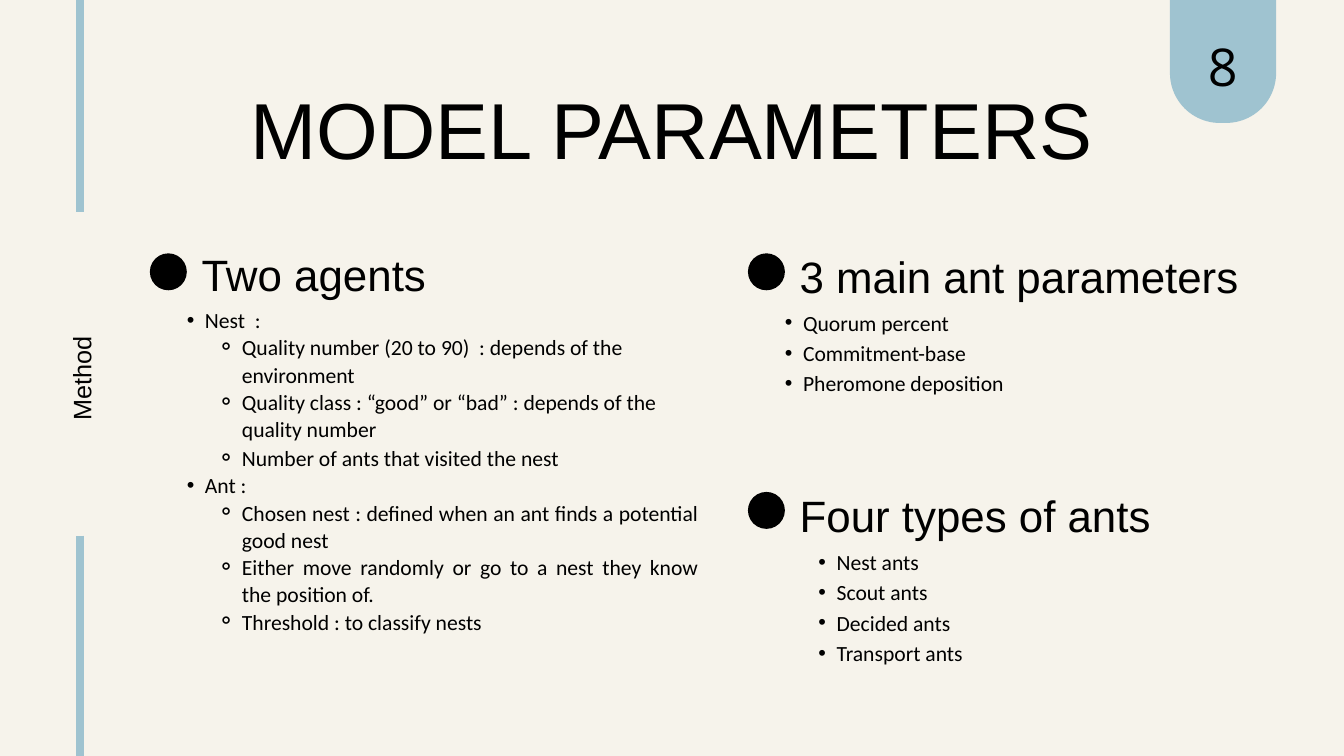
from lxml.etree import SubElement
from pptx import Presentation
from pptx.dml.color import RGBColor
from pptx.enum.shapes import MSO_CONNECTOR, MSO_SHAPE
from pptx.enum.text import MSO_ANCHOR, MSO_AUTO_SIZE, PP_ALIGN
from pptx.oxml.ns import qn
from pptx.util import Inches, Pt

CREAM = RGBColor(0xF6, 0xF3, 0xEB)
BLUE = RGBColor(0x9F, 0xC3, 0xD0)
BLACK = RGBColor(0, 0, 0)
LEFT, MID, JUST = PP_ALIGN.LEFT, PP_ALIGN.CENTER, PP_ALIGN.JUSTIFY

# Content: list items are (level, text, line spacing, alignment)
TITLE = "MODEL PARAMETERS"
SIDE = "Method"
PAGE = "8"
AGENTS = [
    (1, "Nest  :", 29.2, LEFT),
    (2, "Quality number (20 to 90)  : depends of the environment", 29.2, LEFT),
    (2, "Quality class : “good” or “bad” : depends of the quality number", 29.2, LEFT),
    (2, "Number of ants that visited the nest", 30.9, LEFT),
    (1, "Ant :", 29.2, LEFT),
    (2, "Chosen nest : defined when an ant finds a potential good nest", 29.2, JUST),
    (2, "Either move randomly or go to a nest they know the position of.", 29.2, JUST),
    (2, "Threshold : to classify nests", 29.2, LEFT),
]
PARAMS = [(1, text, 32.5, LEFT) for text in
          ("Quorum percent", "Commitment-base", "Pheromone deposition")]
TYPES = [(1, text, 32.5, LEFT) for text in
         ("Nest ants", "Scout ants", "Decided ants", "Transport ants")]

# Sections: heading, dot corner, heading box, list box, items
PARTS = [
    ("Two agents", (2.23, 3.77), (3, 3.56, 5.89, 0.87), (2.5, 4.55, 7.89, 5.61), AGENTS),
    ("3 main ant parameters", (11.13, 3.77), (11.9, 3.59, 6.7, 0.85),
     (11.4, 4.54, 7.49, 1.36), PARAMS),
    ("Four types of ants", (11.13, 7.32), (11.9, 7.14, 5.89, 0.85),
     (11.9, 8.1, 7.49, 1.81), TYPES),
]
DOT = 0.55
BULLETS = {1: ("•", 0.55, 0.27), 2: ("⚬", 1.1, 0.37)}  # sign, margin, hang
BAR_X = 1.19
BARS = [(0, 3.16), (7.97, 11.25)]


def style(para, size, face, space, align):
    para.alignment = align
    para.line_spacing = Pt(space)
    para.font.size = Pt(size)
    para.font.name = face
    para.font.color.rgb = BLACK


def frame(shape):
    text = shape.text_frame
    text.margin_left = text.margin_right = text.margin_top = text.margin_bottom = 0
    text.word_wrap = True
    text.auto_size = MSO_AUTO_SIZE.SHAPE_TO_FIT_TEXT
    text.vertical_anchor = MSO_ANCHOR.TOP
    return text


def label(box, words, size, face, space, align=LEFT):
    shape = slide.shapes.add_textbox(*map(Inches, box))
    text = frame(shape)
    text.text = words
    style(text.paragraphs[0], size, face, space, align)
    return shape


def bullets(box, items):
    text = frame(slide.shapes.add_textbox(*map(Inches, box)))
    for i, (level, words, space, align) in enumerate(items):
        para = text.add_paragraph() if i else text.paragraphs[0]
        para.text = words
        para.level = level
        sign, margin, hang = BULLETS[level]
        props = para._p.get_or_add_pPr()
        props.set("marL", str(Inches(margin)))
        props.set("indent", str(-Inches(hang)))
        SubElement(props, qn("a:buFont")).set("typeface", "Arial")
        SubElement(props, qn("a:buChar")).set("char", sign)
        style(para, 23.2, "Calibri", space, align)


def solid(kind, box, color):
    shape = slide.shapes.add_shape(kind, *map(Inches, box))
    shape.shadow.inherit = False
    shape.fill.solid()
    shape.fill.fore_color.rgb = color
    shape.line.fill.background()
    return shape


deck = Presentation()
deck.slide_width, deck.slide_height = Inches(20), Inches(11.25)
slide = deck.slides.add_slide(deck.slide_layouts[5])
slide.background.fill.solid()
slide.background.fill.fore_color.rgb = CREAM

# Title
title = slide.shapes.title
title.left, title.top, title.width, title.height = map(Inches, (2.79, 0.95, 14.41, 1.59))
text = frame(title)
text.text = TITLE
style(text.paragraphs[0], 85, "Arial", 119, MID)

# Sections
for head, spot, head_box, list_box, items in PARTS:
    solid(MSO_SHAPE.OVAL, (*spot, DOT, DOT), BLACK)
    label(head_box, head, 47, "Arial", 65.8)
    bullets(list_box, items)

# Side label between two bars
label((-2.6, 5.37, 7.53, 0.51), SIDE, 27, "Arial", 37.8, MID).rotation = 270
for top, end in BARS:
    bar = slide.shapes.add_connector(
        MSO_CONNECTOR.STRAIGHT, *map(Inches, (BAR_X, top, BAR_X, end)))
    bar.line.color.rgb = BLUE
    bar.line.width = Pt(9)
    SubElement(bar._element.spPr, qn("a:effectLst"))

# Page tab, rounded at the bottom
tab = solid(MSO_SHAPE.ROUND_2_SAME_RECTANGLE, (17.41, 0, 1.58, 1.83), BLUE)
tab.adjustments[0], tab.adjustments[1] = 0, 0.47
label((17.34, 0.36, 1.71, 1.02), PAGE, 55.8, "Open Sans", 78, MID)

deck.save("out.pptx")
